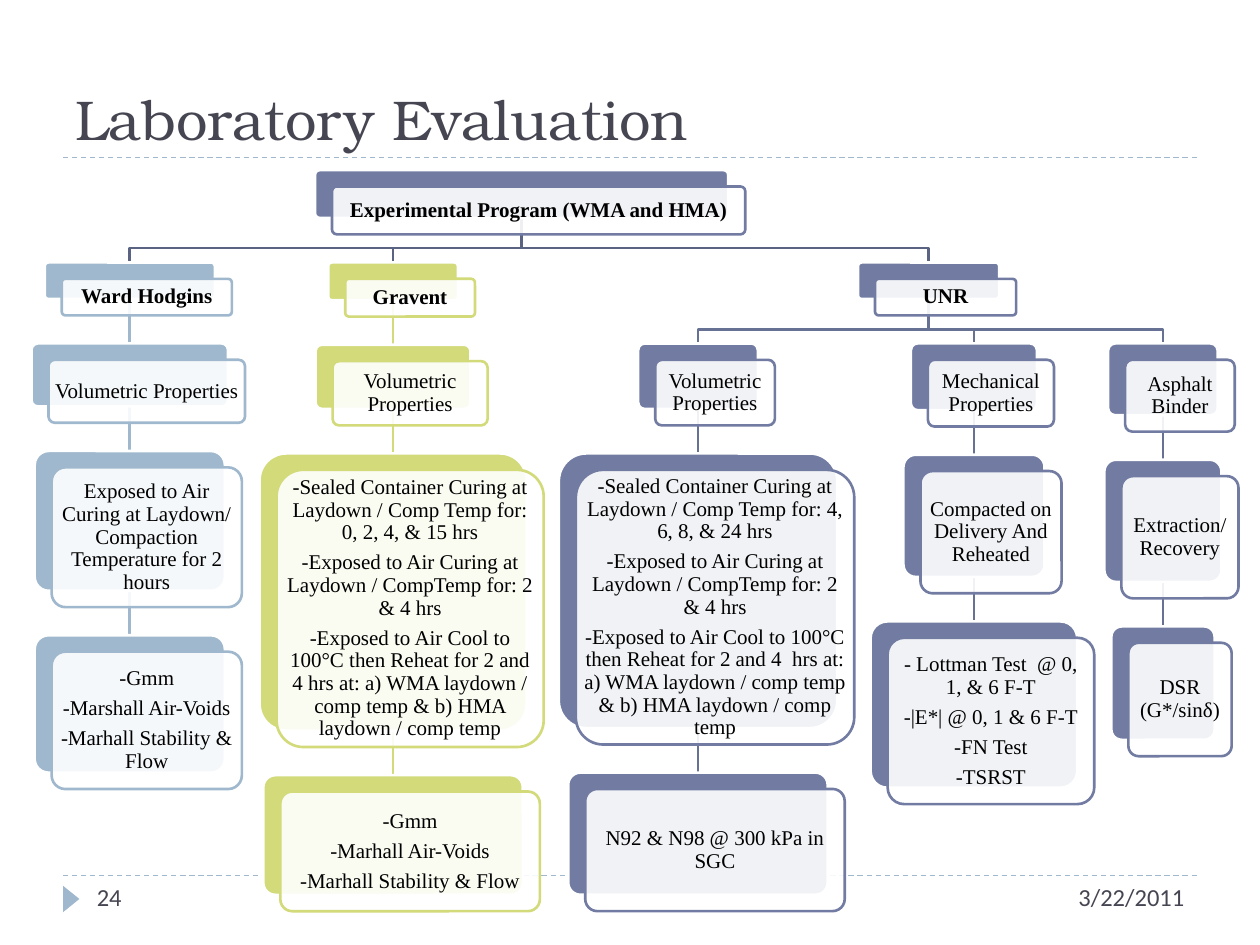
from collections import namedtuple
from dataclasses import dataclass

from lxml import etree
from pptx import Presentation
from pptx.dml.color import RGBColor
from pptx.enum.dml import MSO_LINE
from pptx.enum.shapes import MSO_CONNECTOR, MSO_SHAPE
from pptx.enum.text import MSO_ANCHOR, PP_ALIGN
from pptx.oxml.ns import qn
from pptx.util import Inches, Pt

STRAIGHT = MSO_CONNECTOR.STRAIGHT
ROUNDED, TRIANGLE = MSO_SHAPE.ROUNDED_RECTANGLE, MSO_SHAPE.ISOSCELES_TRIANGLE
TOP, MIDDLE, BOTTOM = MSO_ANCHOR.TOP, MSO_ANCHOR.MIDDLE, MSO_ANCHOR.BOTTOM
LEFT, CENTER, RIGHT = PP_ALIGN.LEFT, PP_ALIGN.CENTER, PP_ALIGN.RIGHT
DASH = MSO_LINE.DASH

# The slide is a grid of 100 columns by 75 rows with square cells
COLUMNS, ROWS = 100, 75
CELL = Inches(10) // COLUMNS


@dataclass(frozen=True)
class Theme:
    title_font: str = "TeX Gyre Bonum"
    footer_font: str = "Calibri"
    card_font: str = "Times New Roman"
    title_size: float = 32
    footer_size: float = 14
    card_size: float = 12
    rule_width: float = 0.75
    card_line: float = 1.5
    ink: str = "464653"
    black: str = "000000"
    white: str = "FFFFFF"
    blue: str = "9FB8CD"
    lime: str = "D2DA7A"
    indigo: str = "727CA3"
    root_link: str = "5B6383"
    indigo_link: str = "677194"


THEME = Theme()
Box = namedtuple("Box", "left top width height")
# center, width and height are in cells; link colours the lines to the children
Node = namedtuple("Node", "text center width height color link bold children")

CARD_SHIFT = (1.35, 1.3)   # front panel against back panel
LEVEL_GAP = 3.53           # back panel to the next level
TRUNK = 2.4                # drop before a branch turns
CARD_INSET, CORNER = 0.5, 0.1


def cells(*counts):
    return [round(count * CELL) for count in counts]


def rgb(color):
    return RGBColor.from_string(color)


def stroke(line, color, width):
    line.color.rgb = rgb(color)
    line.width = Pt(width)


def add_line(slide, start, end, color, width):
    line = slide.shapes.add_connector(STRAIGHT, *cells(*start, *end))
    stroke(line.line, color, width)
    etree.SubElement(line._element.spPr, qn("a:effectLst"))
    return line


def write(frame, text, font, size, color, align, anchor, bold=False):
    frame.text = text
    frame.word_wrap = True
    frame.vertical_anchor = anchor
    for paragraph in frame.paragraphs:
        paragraph.alignment = align
        paragraph.font.name = font
        paragraph.font.size = Pt(size)
        paragraph.font.bold = bold
        paragraph.font.color.rgb = rgb(color)


def add_rule(slide, box, row):
    rule = add_line(slide, (box.left, row), (box.left + box.width, row),
                    THEME.blue, THEME.rule_width)
    rule.line.dash_style = DASH


def add_title(slide, box):
    add_rule(slide, box, box.top + box.height)
    title = slide.shapes.add_textbox(*cells(*box))
    write(title.text_frame, "Laboratory Evaluation", THEME.title_font,
          THEME.title_size, THEME.ink, LEFT, BOTTOM)


def add_footer(slide, box):
    add_rule(slide, box, box.top)
    # Page marker
    marker = slide.shapes.add_shape(
        TRIANGLE, *cells(box.left - 0.4, box.top + 1.2, 2.1, 1.3))
    marker.rotation = 90
    marker.shadow.inherit = False
    marker.fill.solid()
    marker.fill.fore_color.rgb = rgb(THEME.blue)
    marker.line.fill.background()
    # Page number and date
    right = box.left + box.width
    for text, left, width, align in (("24", box.left + 1.7, 21.7, LEFT),
                                     ("3/22/2011", right - 25, 25, RIGHT)):
        label = slide.shapes.add_textbox(*cells(left, box.top, width, box.height))
        write(label.text_frame, text, THEME.footer_font, THEME.footer_size,
              THEME.ink, align, TOP)


def add_panel(slide, box, fill, line):
    panel = slide.shapes.add_shape(ROUNDED, *cells(*box))
    panel.adjustments[0] = CORNER
    panel.shadow.inherit = False
    panel.fill.solid()
    panel.fill.fore_color.rgb = rgb(fill)
    stroke(panel.line, line, THEME.card_line)
    return panel


def add_card(slide, node, box):
    add_panel(slide, box, node.color, THEME.white)
    front_box = box._replace(left=box.left + CARD_SHIFT[0],
                             top=box.top + CARD_SHIFT[1])
    front = add_panel(slide, front_box, THEME.white, node.color)
    tint = front._element.spPr.find(qn("a:solidFill"))[0]
    etree.SubElement(tint, qn("a:alpha")).set("val", "90000")
    frame = front.text_frame
    # Rounded corners already inset the text by 0.29 of their radius
    inset, = cells(max(0, CARD_INSET - 0.29 * CORNER * min(box.width, box.height)))
    frame.margin_left = frame.margin_right = inset
    frame.margin_top = frame.margin_bottom = inset
    write(frame, node.text, THEME.card_font, THEME.card_size, THEME.black,
          CENTER, MIDDLE, node.bold)
    for paragraph in frame.paragraphs:
        paragraph.line_spacing = 0.9
        paragraph.space_after = Pt(0.35 * THEME.card_size)


def add_branch(slide, start, end, color):
    if start[0] == end[0]:
        add_line(slide, start, end, color, THEME.card_line)
        return
    turn = start[1] + TRUNK
    outline = slide.shapes.build_freeform(*cells(*start))
    outline.add_line_segments(
        [cells(*point) for point in ((start[0], turn), (end[0], turn), end)],
        close=False)
    branch = outline.convert_to_shape()
    branch.shadow.inherit = False
    branch.fill.background()
    stroke(branch.line, color, THEME.card_line)


def add_tree(slide, node, box):
    """Draw the branches of a node, its subtrees, then its own card."""
    middle, bottom = box.left + node.center, box.top + node.height
    below = box._replace(top=bottom + LEVEL_GAP,
                         height=box.height - node.height - LEVEL_GAP)
    for child in node.children:
        add_branch(slide, (middle, bottom),
                   (box.left + child.center, below.top), node.link)
        add_tree(slide, child, below)
    add_card(slide, node, Box(middle - node.width / 2, box.top,
                              node.width, node.height))


def column(center, color, link, cards, bold=False):
    """Chain cards of (text, width, height) under one another."""
    chain = ()
    for level, (text, width, height) in reversed(list(enumerate(cards))):
        chain = (Node(text, center, width, height, color, link,
                      bold and level == 0, chain),)
    return chain[0]


def curing(hours, reheat):
    return (f"-Sealed Container Curing at Laydown / Comp Temp for: {hours} hrs\n"
            "-Exposed to Air Curing at Laydown / CompTemp for: 2 & 4 hrs\n"
            f"-Exposed to Air Cool to 100°C then Reheat for {reheat} hrs at: "
            "a) WMA laydown / comp temp & b) HMA laydown / comp temp")


VOLUMETRIC = "Volumetric Properties"
FLOW = "-Marhall Stability & Flow"
BLUE, LIME = (THEME.blue, THEME.blue), (THEME.lime, THEME.lime)
INDIGO = (THEME.indigo, THEME.indigo_link)

FIRST_SITE = column(10.3, *BLUE, [
    ("Ward Hodgins", 13.5, 2.9),
    (VOLUMETRIC, 15.6, 5),
    ("Exposed to Air Curing at Laydown/ Compaction Temperature for 2 hours", 15.1, 11.1),
    (f"-Gmm\n-Marshall Air-Voids\n{FLOW}", 15.1, 10.9)], bold=True)
SECOND_SITE = column(31.2, *LIME, [
    ("Gravent", 10.3, 3),
    (VOLUMETRIC, 12.3, 5.1),
    (curing("0, 2, 4, & 15", "2 and 4"), 21.2, 22),
    (f"-Gmm\n-Marhall Air-Voids\n{FLOW}", 20.6, 9.5)], bold=True)
UNR = Node("UNR", 73.7, 11.2, 2.9, *INDIGO, True, (
    column(55.4, *INDIGO, [
        (VOLUMETRIC, 9.5, 5.2),
        (curing("4, 6, 8, & 24", "2 and 4 "), 22.1, 21.8),
        ("N92 & N98 @ 300 kPa in SGC", 20.6, 9.7)]),
    column(77.3, *INDIGO, [
        ("Mechanical Properties", 10, 5.3),
        ("Compacted on Delivery And Reheated", 11.2, 9.7),
        ("- Lottman Test  @ 0, 1, & 6 F-T\n-|E*| @ 0, 1 & 6 F-T\n-FN Test\n-TSRST",
         16.4, 13.2)]),
    column(92.3, *INDIGO, [
        ("Asphalt Binder", 8.7, 5.7),
        ("Extraction/ Recovery", 9.3, 9.7),
        ("DSR (G*/sinδ)", 8.2, 9)])))
PROGRAM = Node("Experimental Program (WMA and HMA)", 41.4, 32.8, 3.8, THEME.indigo,
               THEME.root_link, True, (FIRST_SITE, SECOND_SITE, UNR))


def main():
    deck = Presentation()
    deck.slide_width, deck.slide_height = cells(COLUMNS, ROWS)
    slide = deck.slides.add_slide(deck.slide_layouts[6])
    add_title(slide, Box(5, 1.7, 90, 10.8))
    add_footer(slide, Box(5, 69.5, 90, 4))
    add_tree(slide, PROGRAM, Box(0, 13.5, COLUMNS, 59))
    deck.save("out.pptx")


if __name__ == "__main__":
    main()
